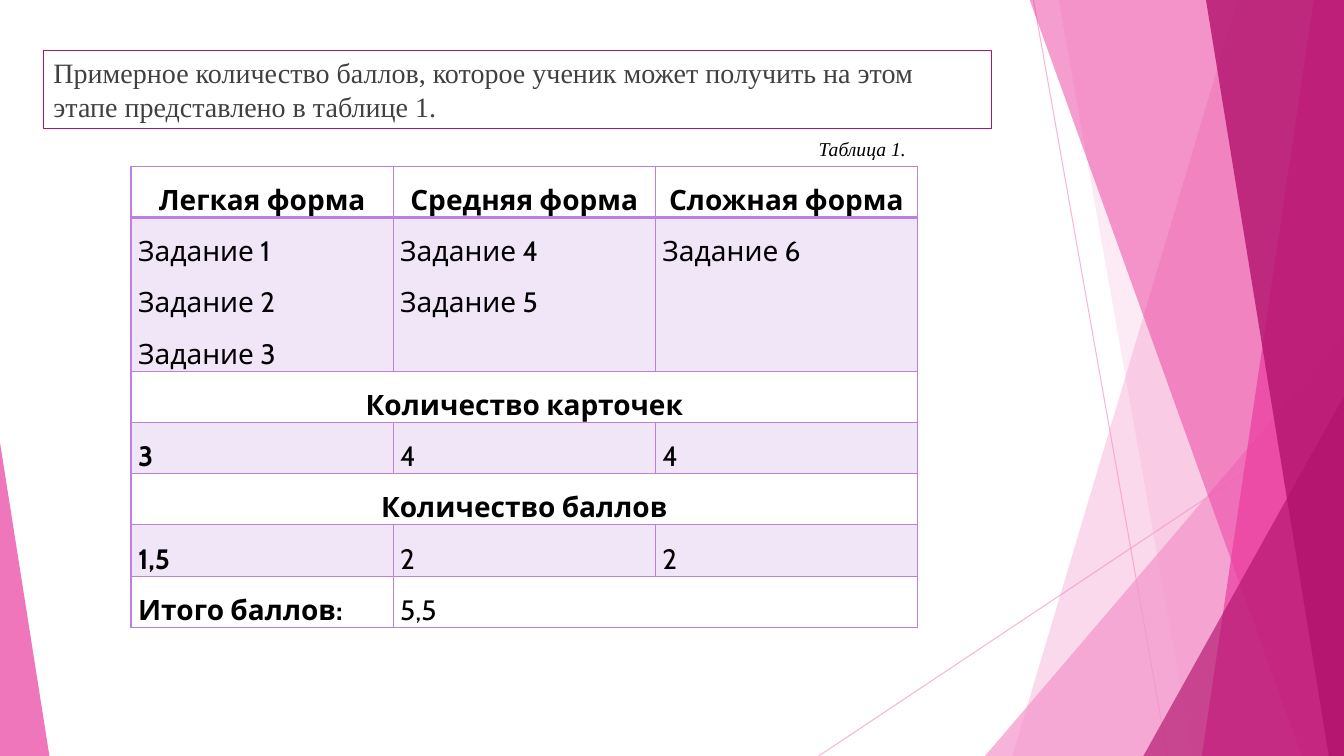
from lxml.etree import SubElement
from pptx import Presentation
from pptx.dml.color import RGBColor
from pptx.enum.shapes import MSO_CONNECTOR, MSO_SHAPE
from pptx.enum.text import MSO_ANCHOR, MSO_AUTO_SIZE, PP_ALIGN
from pptx.oxml.ns import qn
from pptx.util import Inches, Pt

COLORS = {
    "light": "F496CB", "pink": "EB3D9F", "magenta": "B2136D",
    "violet": "BC80E0", "gray": "404040", "black": "000000",
}


def paint(fill, properties, color, opacity):
    """Solid fill with an opacity in percent."""
    fill.solid()
    fill.fore_color.rgb = RGBColor.from_string(COLORS[color])
    value = properties.find(qn("a:solidFill")).find(qn("a:srgbClr"))
    SubElement(value, qn("a:alpha"), val=str(opacity * 1000))


def style_text(paragraph, font_name, size, color, bold=False, italic=False):
    for run in paragraph.runs:
        run.font.name = font_name
        run.font.size = Pt(size)
        run.font.bold = bold
        run.font.italic = italic
        run.font.color.rgb = RGBColor.from_string(COLORS[color])


presentation = Presentation()
presentation.slide_width = Inches(13.33)
presentation.slide_height = Inches(7.5)
slide = presentation.slides.add_slide(presentation.slide_layouts[1])
shapes = slide.shapes
title = shapes.title
title._element.getparent().remove(title._element)

# Thin background lines
for x1, y1, x2, y2 in [(10.25, 0, 11.58, 7.5), (13.33, 4.03, 8.12, 7.5)]:
    connector = shapes.add_connector(
        MSO_CONNECTOR.STRAIGHT, Inches(x1), Inches(y1), Inches(x2), Inches(y2))
    connector.line.width = Pt(0.75)
    paint(connector.line.fill, connector.line._ln, "light", 70)
    SubElement(connector._element.spPr, qn("a:effectLst"))

# Facets: a band gives its top and bottom left corners and runs to the right
# edge; a triangle gives left, top, width, height and apex position
facets = [
    ("band", (12.28, 10.04), "light", 36),
    ("band", (10.5, 11.83), "light", 20),
    ("triangle", (9.77, 3.33, 3.56, 4.17, 1), "light", 72),
    ("band", (10.21, 12.91), "pink", 50),
    ("band", (13.03, 11.92), "pink", 70),
    ("band", (11.96, 13.18), "magenta", 80),
    ("triangle", (11.34, 3.93, 1.99, 3.57, 1), "magenta", 66),
    ("triangle", (0, 4.39, 0.49, 3.11, 0), "pink", 70),
]
for kind, geometry, color, opacity in facets:
    if kind == "band":
        top_x, bottom_x = geometry
        builder = shapes.build_freeform(
            Inches(top_x), Inches(-0.01), scale=1.0)
        corners = [(13.33, -0.01), (13.33, 7.5), (bottom_x, 7.5)]
        builder.add_line_segments(
            [(Inches(x), Inches(y)) for x, y in corners], close=True)
        facet = builder.convert_to_shape()
    else:
        *box, apex = geometry
        facet = shapes.add_shape(
            MSO_SHAPE.ISOSCELES_TRIANGLE, *[Inches(value) for value in box])
        facet.adjustments[0] = apex
    facet.shadow.inherit = False
    facet.line.fill.background()
    paint(facet.fill, facet._element.spPr, color, opacity)

# Introductory text in the body placeholder
body = slide.placeholders[1]
body.left, body.top = Inches(0.43), Inches(0.5)
body.width, body.height = Inches(9.4), Inches(0.78)
body.line.color.rgb = RGBColor.from_string(COLORS["magenta"])
body.line.width = Pt(0.75)
text_frame = body.text_frame
text_frame.text = ("Примерное количество баллов, которое ученик может получить "
                   "на этом этапе представлено в таблице 1.")
text_frame.auto_size = MSO_AUTO_SIZE.NONE
text_frame.vertical_anchor = MSO_ANCHOR.TOP
paragraph = text_frame.paragraphs[0]
paragraph.space_before = Pt(10)
properties = paragraph._p.get_or_add_pPr()
properties.set("marL", "0")
properties.set("indent", "0")
SubElement(properties, qn("a:buNone"))
style_text(paragraph, "Times New Roman", 20, "gray")

# Points table: None marks a cell covered by the merged cell on its left
rows = [
    ["Легкая форма", "Средняя форма", "Сложная форма"],
    ["Задание 1\nЗадание 2\nЗадание 3", "Задание 4\nЗадание 5", "Задание 6"],
    ["Количество карточек", None, None],
    ["3", "4", "4"],
    ["Количество баллов", None, None],
    ["1,5", "2", "2"],
    ["Итого баллов:", "5,5", None],
]
row_heights = [0.48, 1.44, 0.48, 0.48, 0.48, 0.48, 0.46]
centered_rows = (0, 2, 4)
table = shapes.add_table(len(rows), 3, Inches(1.3), Inches(1.65),
                         Inches(7.8), Inches(sum(row_heights))).table
table.first_row = False
table.horz_banding = False
for column in table.columns:
    column.width = Inches(2.6)

for row_index, texts in enumerate(rows):
    table.rows[row_index].height = Inches(row_heights[row_index])
    for column_index, text in enumerate(texts):
        cell = table.cell(row_index, column_index)
        cell.margin_left = cell.margin_right = Inches(0.07)
        cell.margin_top = cell.margin_bottom = 0

        cell_properties = cell._tc.get_or_add_tcPr()
        for side in ("lnL", "lnR", "lnT", "lnB"):
            heavy = (row_index, side) in [(0, "lnB"), (1, "lnT")]
            border = SubElement(cell_properties, qn(f"a:{side}"),
                                w=str(Pt(2 if heavy else 1)))
            border_fill = SubElement(border, qn("a:solidFill"))
            SubElement(border_fill, qn("a:srgbClr"), val=COLORS["violet"])
        if row_index % 2:
            paint(cell.fill, cell_properties, "violet", 20)
        else:
            cell.fill.background()

        if text is None:
            continue
        cell.text_frame.text = text
        centered = row_index in centered_rows
        bold = centered or (column_index == 0 and row_index > 1)
        for paragraph in cell.text_frame.paragraphs:
            paragraph.alignment = PP_ALIGN.CENTER if centered else PP_ALIGN.LEFT
            paragraph.line_spacing = 1.5
            style_text(paragraph, "Cabin", 20, "black", bold=bold)

for row_index, first, last in [(2, 0, 2), (4, 0, 2), (6, 1, 2)]:
    table.cell(row_index, first).merge(table.cell(row_index, last))

# Table caption
caption = shapes.add_textbox(Inches(8.02), Inches(1.31), Inches(1.07), Inches(0.34))
caption.text_frame.word_wrap = False
caption.text_frame.auto_size = MSO_AUTO_SIZE.SHAPE_TO_FIT_TEXT
caption.text_frame.text = "Таблица 1."
style_text(caption.text_frame.paragraphs[0], "Times New Roman", 14, "black", italic=True)

presentation.save("out.pptx")
